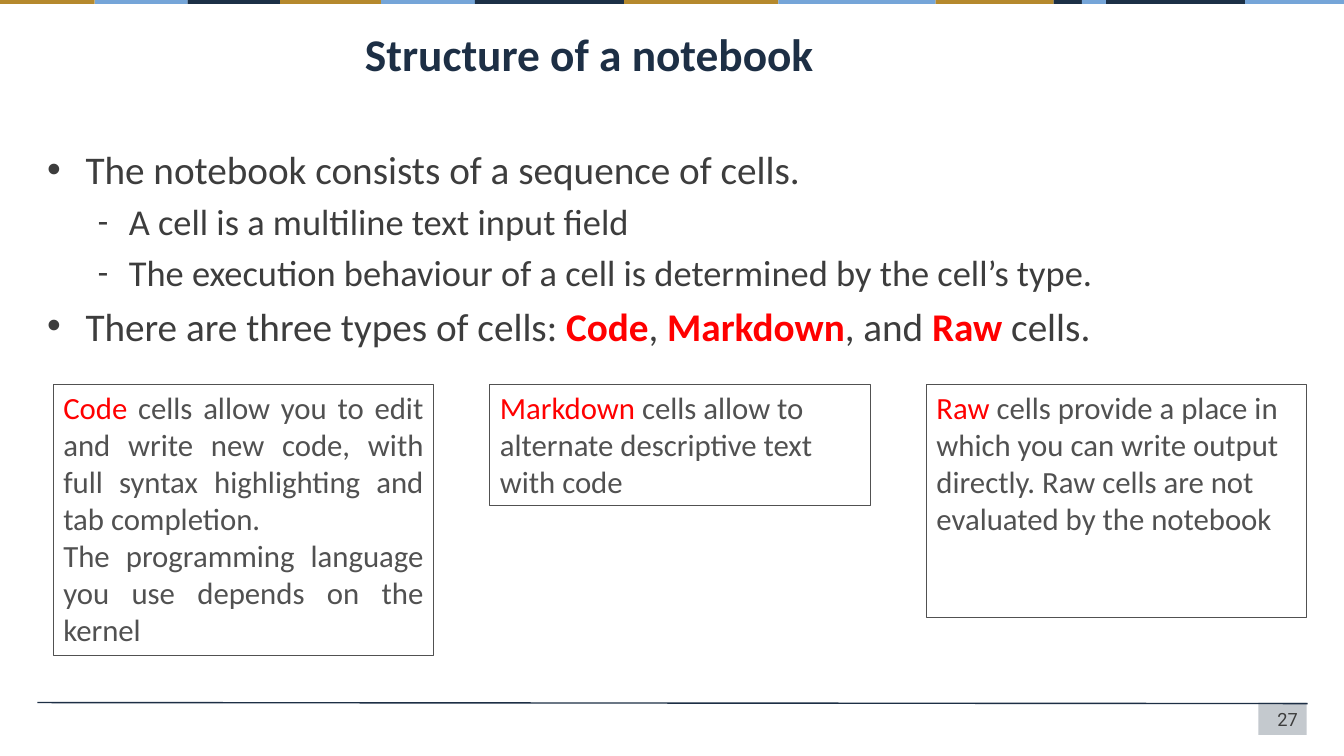
import dataclasses
import itertools
import typing

import lxml.etree
import pptx
import pptx.dml.color
import pptx.enum.shapes
import pptx.enum.text
import pptx.oxml
import pptx.oxml.ns
import pptx.util

EMU_PER_PX = 9144  # 100 px to the inch
COLORS = {
    "navy": "1D2F45", "dark": "1C3046", "gold": "B5892D", "blue": "75A5D8",
    "body": "3D3D3D", "grey": "515151", "red": "FF0000",
}
ALIGN = pptx.enum.text.PP_ALIGN
ANCHOR = pptx.enum.text.MSO_ANCHOR
AUTO_SIZE = pptx.enum.text.MSO_AUTO_SIZE
RECTANGLE = pptx.enum.shapes.MSO_SHAPE.RECTANGLE
FRAME_FORMAT = {"word_wrap": True, "auto_size": AUTO_SIZE.NONE, "vertical_anchor": ANCHOR.TOP}


@dataclasses.dataclass(frozen=True)
class Run:
    text: str
    color: str = "body"
    bold: bool = False


@dataclasses.dataclass(frozen=True)
class Bullet:
    character: str
    margin: int
    hanging: int
    percent: int


@dataclasses.dataclass(frozen=True)
class Line:
    runs: tuple[Run, ...]
    size: float
    font: str = "Calibri"
    align: ALIGN = ALIGN.LEFT
    level: int = 0
    space_before: float = 0
    bullet: typing.Optional[Bullet] = None


@dataclasses.dataclass(frozen=True)
class CellBox:
    left: int
    height: int
    align: ALIGN
    paragraphs: tuple[tuple[Run, ...], ...]


def px(value: int) -> int:
    return pptx.util.Emu(value * EMU_PER_PX)


def rgb(name: str) -> pptx.dml.color.RGBColor:
    return pptx.dml.color.RGBColor.from_string(COLORS[name])


def apply_format(target: typing.Any, values: dict[str, typing.Any]) -> None:
    for name, value in values.items():
        setattr(target, name, value)


def place(shape: typing.Any, left: int, top: int, width: int, height: int) -> None:
    apply_format(shape, {"left": px(left), "top": px(top), "width": px(width), "height": px(height)})


def add_bullet(paragraph: typing.Any, bullet: Bullet) -> None:
    properties = paragraph._p.get_or_add_pPr()
    properties.set("marL", str(px(bullet.margin)))
    properties.set("indent", str(-px(bullet.hanging)))
    for tag, name, value in (
        ("a:buSzPct", "val", str(bullet.percent * 1000)),
        ("a:buFont", "typeface", "Arial"),
        ("a:buChar", "char", bullet.character),
    ):
        lxml.etree.SubElement(properties, pptx.oxml.ns.qn(tag)).set(name, value)


def write(frame: typing.Any, lines: typing.Iterable[Line], **frame_format: typing.Any) -> None:
    apply_format(frame, FRAME_FORMAT | frame_format)
    for index, line in enumerate(lines):
        paragraph = frame.add_paragraph() if index else frame.paragraphs[0]
        if line.bullet:
            add_bullet(paragraph, line.bullet)
        apply_format(paragraph, {
            "alignment": line.align, "level": line.level,
            "space_before": pptx.util.Pt(line.space_before if index else 0),
        })
        for part in line.runs:
            run = paragraph.add_run()
            run.text = part.text
            apply_format(run.font, {
                "name": line.font, "size": pptx.util.Pt(line.size), "bold": part.bold,
            })
            run.font.color.rgb = rgb(part.color)


def add_rectangle(slide: typing.Any, left: int, top: int, width: int, height: int,
                  fill: str = "", line: str = "") -> typing.Any:
    shape = slide.shapes.add_shape(RECTANGLE, px(left), px(top), px(width), px(height))
    shape.shadow.inherit = False
    if fill:
        shape.fill.solid()
        shape.fill.fore_color.rgb = rgb(fill)
    else:
        shape.fill.background()
    if line:
        shape.line.color.rgb = rgb(line)
        shape.line.width = pptx.util.Pt(0.75)
    else:
        shape.line.fill.background()
    return shape


def add_text(slide: typing.Any, left: int, top: int, width: int, height: int,
             lines: typing.Iterable[Line], **frame_format: typing.Any) -> None:
    box = slide.shapes.add_textbox(px(left), px(top), px(width), px(height))
    write(box.text_frame, lines, **frame_format)


# Top strip: boundaries between neighbouring segments and their colours
STRIP_EDGES = (0, 94, 186, 278, 378, 471, 619, 772, 928, 1045, 1073, 1097, 1235, 1333)
STRIP_COLORS = ("gold", "blue", "dark", "gold", "blue", "dark", "gold",
                "blue", "gold", "dark", "blue", "dark", "blue")

# Bulleted text
DOT = Bullet("•", 38, 38, 100)
DASH = Bullet("-", 81, 31, 90)


def point(*runs: Run) -> Line:
    return Line(runs, 28, space_before=5.6, bullet=DOT)


def subpoint(text: str) -> Line:
    return Line((Run(text),), 26, level=1, space_before=5.2, bullet=DASH)


POINTS = (
    point(Run("The notebook consists of a sequence of cells.")),
    subpoint("A cell is a multiline text input field"),
    subpoint("The execution behaviour of a cell is determined by the cell’s type."),
    point(Run("There are three types of cells: "), Run("Code", "red", True), Run(", "),
          Run("Markdown", "red", True), Run(", and "), Run("Raw", "red", True), Run(" cells.")),
)

# Boxes explaining the cell types
BOX_TOP, BOX_WIDTH = 381, 377
CELL_BOXES = (
    CellBox(53, 269, ALIGN.JUSTIFY, (
        (Run("Code", "red"), Run(" cells allow you to edit and write new code, with full syntax "
                                 "highlighting and tab completion.", "grey")),
        (Run("The programming language you use depends on the kernel", "grey"),),
    )),
    CellBox(486, 121, ALIGN.LEFT, (
        (Run("Markdown", "red"),
         Run(" cells allow to alternate descriptive text with code", "grey")),
    )),
    CellBox(919, 232, ALIGN.LEFT, (
        (Run("Raw ", "red"), Run("cells provide a place in which you can write output directly. "
                                 "Raw cells are not evaluated by the notebook", "grey")),
    )),
)


def main() -> None:
    presentation = pptx.Presentation()
    apply_format(presentation, {"slide_width": px(1333), "slide_height": px(750)})
    slide = presentation.slides.add_slide(presentation.slide_layouts[5])

    # Footer block, rule and page number
    block = add_rectangle(slide, 1248, 697, 48, 32, fill="navy")
    color = block._element.spPr.find(".//" + pptx.oxml.ns.qn("a:srgbClr"))
    lxml.etree.SubElement(color, pptx.oxml.ns.qn("a:alpha")).set("val", "26000")
    rule = slide.shapes.add_connector(
        pptx.enum.shapes.MSO_CONNECTOR.STRAIGHT, px(1297), px(698), px(37), px(697))
    rule.line.color.rgb = rgb("navy")
    rule.line.width = pptx.util.Pt(1)
    lxml.etree.SubElement(rule._element.spPr, pptx.oxml.ns.qn("a:effectLst"))
    page_number = Line((Run("27"),), 13, font="Roboto", align=ALIGN.RIGHT)
    add_text(slide, 956, 698, 341, 31, (page_number,), vertical_anchor=ANCHOR.MIDDLE)

    # Top strip
    for (left, right), fill in zip(itertools.pairwise(STRIP_EDGES), STRIP_COLORS):
        add_rectangle(slide, left, 0, right - left, 4, fill=fill)

    # Title and bulleted text
    title = slide.shapes.title
    place(title, 352, 21, 945, 59)
    write(title.text_frame, (Line((Run("Structure of a notebook", "navy", True),), 32.4),))
    add_text(slide, 37, 139, 1260, 531, POINTS)

    # Cell type boxes
    for box in CELL_BOXES:
        shape = add_rectangle(slide, box.left, BOX_TOP, BOX_WIDTH, box.height, line="grey")
        lines = [Line(runs, 22, align=box.align) for runs in box.paragraphs]
        write(shape.text_frame, lines, auto_size=AUTO_SIZE.SHAPE_TO_FIT_TEXT)

    presentation.save("out.pptx")


if __name__ == "__main__":
    main()
